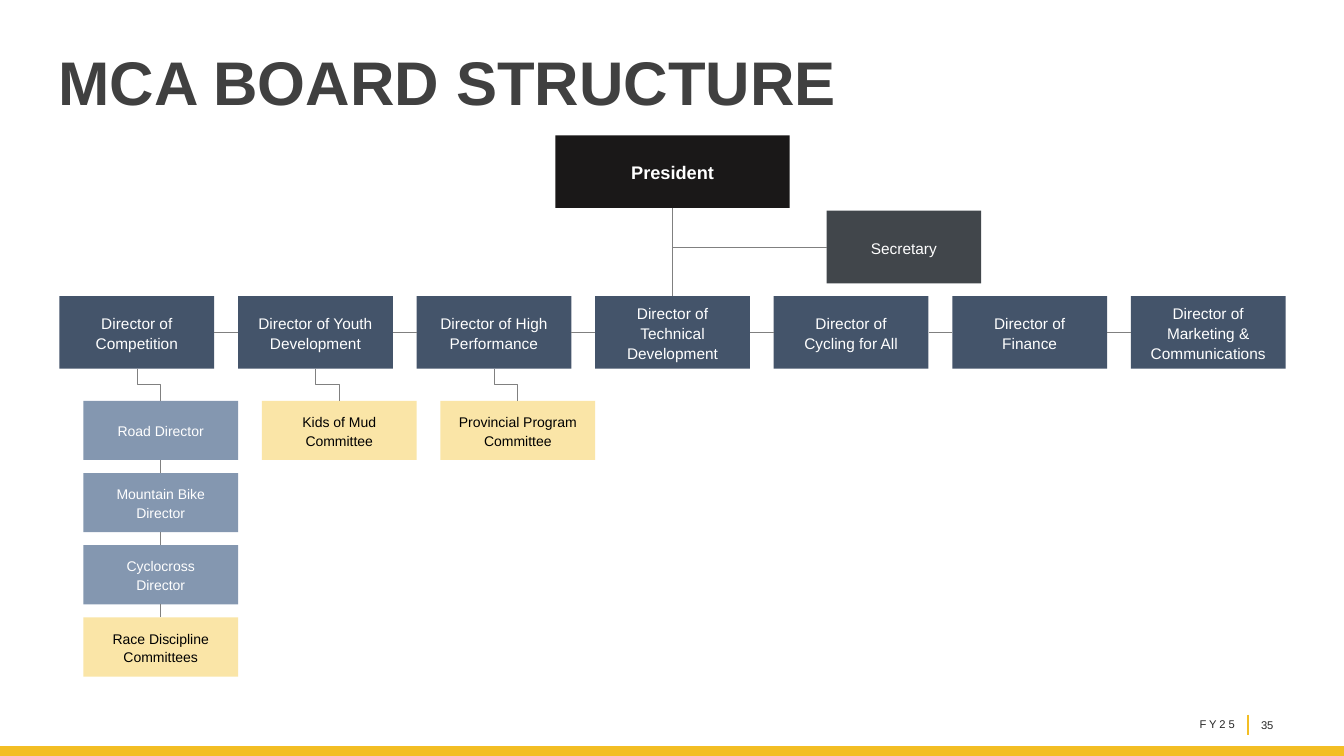
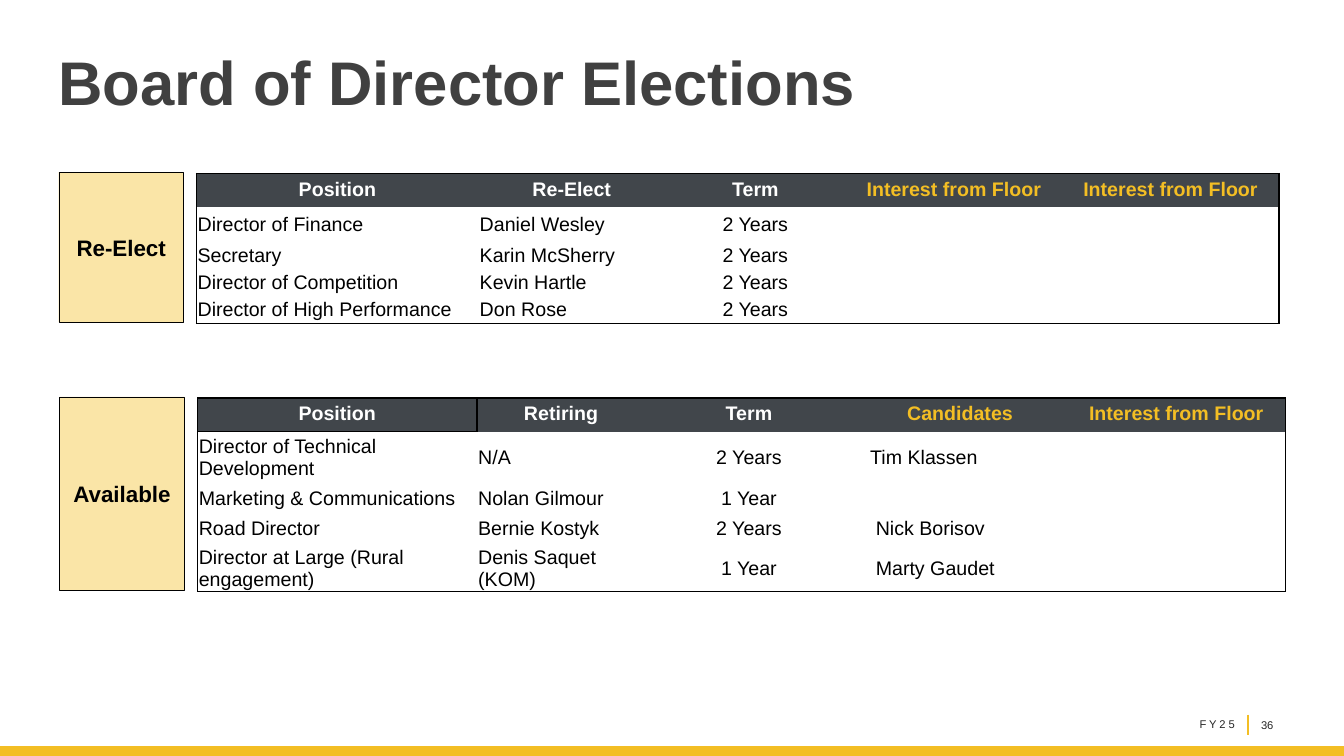
from lxml import etree
from pptx import Presentation
from pptx.dml.color import RGBColor
from pptx.enum.shapes import MSO_CONNECTOR, MSO_SHAPE
from pptx.enum.text import MSO_ANCHOR, PP_ALIGN
from pptx.oxml.ns import qn
from pptx.util import Cm, Pt

RECTANGLE = MSO_SHAPE.RECTANGLE
STRAIGHT, ELBOW = MSO_CONNECTOR.STRAIGHT, MSO_CONNECTOR.ELBOW
TOP, MIDDLE, BOTTOM = MSO_ANCHOR.TOP, MSO_ANCHOR.MIDDLE, MSO_ANCHOR.BOTTOM
LEFT, CENTER, RIGHT = PP_ALIGN.LEFT, PP_ALIGN.CENTER, PP_ALIGN.RIGHT
SIDE_TOP, SIDE_LEFT, SIDE_BOTTOM, SIDE_RIGHT = range(4)

FONT = "Arial"
COLORS = {
    "white": "FFFFFF",
    "black": "000000",
    "title": "404040",
    "footer": "262626",
    "gold": "F3BE24",
    "cream": "FAE5A7",
    "president": "1A1818",
    "slate": "41464B",
    "director": "44546A",
    "discipline": "8497B0",
    "line": "808080",
}

BOX_WIDTH, BOX_HEIGHT = 3.9, 1.83
DIRECTOR_LEFT, DIRECTOR_TOP, DIRECTOR_PITCH = 1.5, 7.46, 4.5
CHILD_INDENT, CHILD_TOP, CHILD_HEIGHT, CHILD_PITCH = 0.6, 10.1, 1.49, 1.82

DIRECTORS = [
    ("Director of Competition", [
        ("Road Director", "discipline"),
        ("Mountain Bike Director", "discipline"),
        ("Cyclocross Director", "discipline"),
        ("Race Discipline Committees", "cream"),
    ]),
    ("Director of Youth Development", [("Kids of Mud Committee", "cream")]),
    ("Director of High Performance", [("Provincial Program Committee", "cream")]),
    ("Director of Technical Development", []),
    ("Director of Cycling for All", []),
    ("Director of Finance", []),
    ("Director of Marketing & Communications", []),
]

RE_ELECT_ROWS = [
    ["Position", "Re-Elect", "Term", "Interest from Floor", "Interest from Floor"],
    ["Director of Finance", "Daniel Wesley", "2 Years", "", ""],
    ["Secretary", "Karin McSherry", "2 Years", "", ""],
    ["Director of Competition", "Kevin Hartle", "2 Years", "", ""],
    ["Director of High Performance", "Don Rose", "2 Years", "", ""],
]
AVAILABLE_ROWS = [
    ["Position", "Retiring", "Term", "Candidates", "Interest from Floor"],
    ["Director of Technical Development", "N/A", "2 Years", "Tim Klassen", ""],
    ["Marketing & Communications", "Nolan Gilmour", "1 Year", "", ""],
    ["Road Director", "Bernie Kostyk", "2 Years", "Nick Borisov", ""],
    ["Director at Large (Rural engagement)", "Denis Saquet (KOM)", "1 Year",
     "Marty Gaudet", ""],
]
CANDIDATE_INDENTS = {"Tim Klassen": 0.44, "Nick Borisov": 0.58, "Marty Gaudet": 0.58}
POSITION_FRAME = {(0, 0): "RB", (0, 1): "L", (1, 0): "T"}


def rgb(name):
    return RGBColor.from_string(COLORS[name])


def style(para, size, color, bold=False, align=LEFT, spacing=None):
    para.alignment = align
    if spacing:
        para.line_spacing = spacing
    font = para.font
    font.name, font.size, font.bold = FONT, Pt(size), bold
    font.color.rgb = rgb(color)


def set_margins(target, left, top, right, bottom):
    target.margin_left, target.margin_top = Cm(left), Cm(top)
    target.margin_right, target.margin_bottom = Cm(right), Cm(bottom)


def add_text(page, text, left, top, width, height, size, color,
             anchor=TOP, bottom_margin=0, **look):
    frame = page.shapes.add_textbox(Cm(left), Cm(top), Cm(width), Cm(height)).text_frame
    frame.word_wrap = True
    frame.vertical_anchor = anchor
    set_margins(frame, 0, 0, 0, bottom_margin)
    para = frame.paragraphs[0]
    para.text = text
    style(para, size, color, **look)
    return para


def add_rectangle(page, left, top, width, height, fill, line=None):
    box = page.shapes.add_shape(RECTANGLE, Cm(left), Cm(top), Cm(width), Cm(height))
    box.shadow.inherit = False
    box.fill.solid()
    box.fill.fore_color.rgb = rgb(fill)
    if line:
        box.line.color.rgb = rgb(line)
        box.line.width = Pt(0.25)
    else:
        box.line.fill.background()
    return box


def fill_text(box, text, size, color, bold=False, spacing=None):
    frame = box.text_frame
    frame.word_wrap = True
    frame.vertical_anchor = MIDDLE
    para = frame.paragraphs[0]
    para.text = text
    style(para, size, color, bold, CENTER, spacing)


def add_role(page, text, left, top, fill, size=11, width=BOX_WIDTH,
             height=BOX_HEIGHT, bold=False):
    box = add_rectangle(page, left, top, width, height, fill)
    set_margins(box.text_frame, 0.46, 0.25, 0.46, 0.25)
    fill_text(box, text, size, "black" if fill == "cream" else "white", bold, 1.1)
    return box


def add_line(page, kind, start, end, color="line", width=0.5):
    line = page.shapes.add_connector(kind, *start, *end)
    line.line.color.rgb = rgb(color)
    line.line.width = Pt(width)
    etree.SubElement(line._element.spPr, qn("a:effectLst"))
    return line


def side_point(box, side):
    across = {SIDE_LEFT: 0, SIDE_RIGHT: box.width}.get(side, box.width // 2)
    down = {SIDE_TOP: 0, SIDE_BOTTOM: box.height}.get(side, box.height // 2)
    return box.left + across, box.top + down


def join(page, first, first_side, second, second_side, kind=STRAIGHT):
    line = add_line(page, kind, side_point(first, first_side),
                    side_point(second, second_side))
    line.begin_connect(first, first_side)
    line.end_connect(second, second_side)
    return line


def join_downward(page, first, second, second_side, preset="bentConnector3"):
    line = join(page, first, SIDE_BOTTOM, second, second_side, ELBOW)
    width, height = line.width, line.height
    line.left += (width - height) // 2
    line.top += (height - width) // 2
    line.width, line.height = height, width
    properties = line._element.spPr
    frame = properties.find(qn("a:xfrm"))
    frame.set("rot", "16200000")
    frame.set("flipH", "1")
    properties.find(qn("a:prstGeom")).set("prst", preset)


def set_borders(cell, edges):
    properties = cell._tc.get_or_add_tcPr()
    for edge in "LRTB":
        border = etree.SubElement(properties, qn(f"a:ln{edge}"))
        if edge in edges:
            border.set("w", str(Pt(1)))
            fill = etree.SubElement(border, qn("a:solidFill"))
            etree.SubElement(fill, qn("a:srgbClr")).set("val", COLORS["black"])
        else:
            etree.SubElement(border, qn("a:noFill"))


def fill_cell(cell, text, row, column):
    para = cell.text_frame.paragraphs[0]
    para.text = text
    if row == 0:
        cell.fill.solid()
        cell.fill.fore_color.rgb = rgb("slate")
        style(para, 14, "gold" if column > 2 else "white", True, CENTER)
        return
    cell.fill.background()
    cell.vertical_anchor = MIDDLE
    set_margins(cell, CANDIDATE_INDENTS.get(text, 0.03), 0.03, 0.03, 0)
    style(para, 14, "black", align=CENTER if column == 2 else LEFT)
    if not text:
        para._p.get_or_add_endParaRPr().set("sz", "1400")


def add_election_table(page, left, top, widths, heights, rows, frames):
    shape = page.shapes.add_table(len(rows), len(widths), Cm(left), Cm(top),
                                  Cm(sum(widths)), Cm(sum(heights)))
    table = shape.table
    table.first_row = table.horz_banding = False
    for column, width in zip(table.columns, widths):
        column.width = Cm(width)
    for table_row, height in zip(table.rows, heights):
        table_row.height = Cm(height)
    for row, texts in enumerate(rows):
        for column, text in enumerate(texts):
            cell = table.cell(row, column)
            edges = frames.get((row, column), "")
            edges += "L" if column == 0 else ""
            edges += "R" if column == len(widths) - 1 else ""
            edges += "T" if row == 0 else ""
            edges += "B" if row == len(rows) - 1 else ""
            set_borders(cell, edges)
            fill_cell(cell, text, row, column)


def add_label(page, text, left, top, height):
    box = add_rectangle(page, left, top, 3.15, height, "cream", "black")
    fill_text(box, text, 16, "black", True)


def add_page(deck, title, number):
    page = deck.slides.add_slide(deck.slide_layouts[6])
    add_text(page, str(number), 31.78, 17.75, 0.9, 1.02, 8, "footer", anchor=MIDDLE)
    year = add_text(page, "FY25", 29.62, 18.08, 1.5, 0.33, 8, "footer", align=RIGHT)
    year.runs[0]._r.get_or_add_rPr().set("spc", "200")
    add_line(page, STRAIGHT, (Cm(31.45), Cm(18.01)), (Cm(31.45), Cm(18.52)), "gold", 1.5)
    add_rectangle(page, -0.02, 18.8, 33.91, 0.53, "gold", "gold")
    add_text(page, title, 1.47, 0.91, 30.9, 2.18, 44, "title", anchor=BOTTOM,
             bottom_margin=0.13, bold=True, spacing=1.2)
    return page


def build_structure(deck):
    page = add_page(deck, "MCA BOARD STRUCTURE", 35)
    president = add_role(page, "President", 14, 3.41, "president", 13, 5.9, bold=True)
    secretary = add_role(page, "Secretary", 20.83, 5.31, "slate")
    directors = []
    for index, (title, children) in enumerate(DIRECTORS):
        left = DIRECTOR_LEFT + index * DIRECTOR_PITCH
        director = add_role(page, title, left, DIRECTOR_TOP, "director")
        if directors:
            join(page, directors[-1], SIDE_RIGHT, director, SIDE_LEFT)
        directors.append(director)
        above = None
        for level, (text, fill) in enumerate(children):
            child = add_role(page, text, left + CHILD_INDENT,
                             CHILD_TOP + level * CHILD_PITCH, fill, 10,
                             height=CHILD_HEIGHT)
            if above is None:
                join_downward(page, director, child, SIDE_TOP)
            else:
                join(page, above, SIDE_BOTTOM, child, SIDE_TOP)
            above = child
    join(page, president, SIDE_BOTTOM, directors[3], SIDE_TOP)
    join_downward(page, president, secretary, SIDE_LEFT, "bentConnector2")


def build_elections(deck):
    page = add_page(deck, "Board of Director Elections", 36)
    add_election_table(page, 4.95, 4.37, [7.11, 4.7, 4.55, 5.46, 5.46],
                       [0.82, 0.86, 0.69, 0.69, 0.69], RE_ELECT_ROWS, {})
    add_election_table(page, 4.98, 10.03, [7.04, 4.24, 5.23, 5.41, 5.49],
                       [0.82, 1.3, 0.76, 0.76, 1.14], AVAILABLE_ROWS, POSITION_FRAME)
    add_label(page, "Re-Elect", 1.48, 4.34, 3.78)
    add_label(page, "Available", 1.5, 10, 4.88)


def main():
    deck = Presentation()
    deck.slide_width, deck.slide_height = Cm(33.87), Cm(19.05)
    build_structure(deck)
    build_elections(deck)
    deck.save("out.pptx")


if __name__ == "__main__":
    main()
